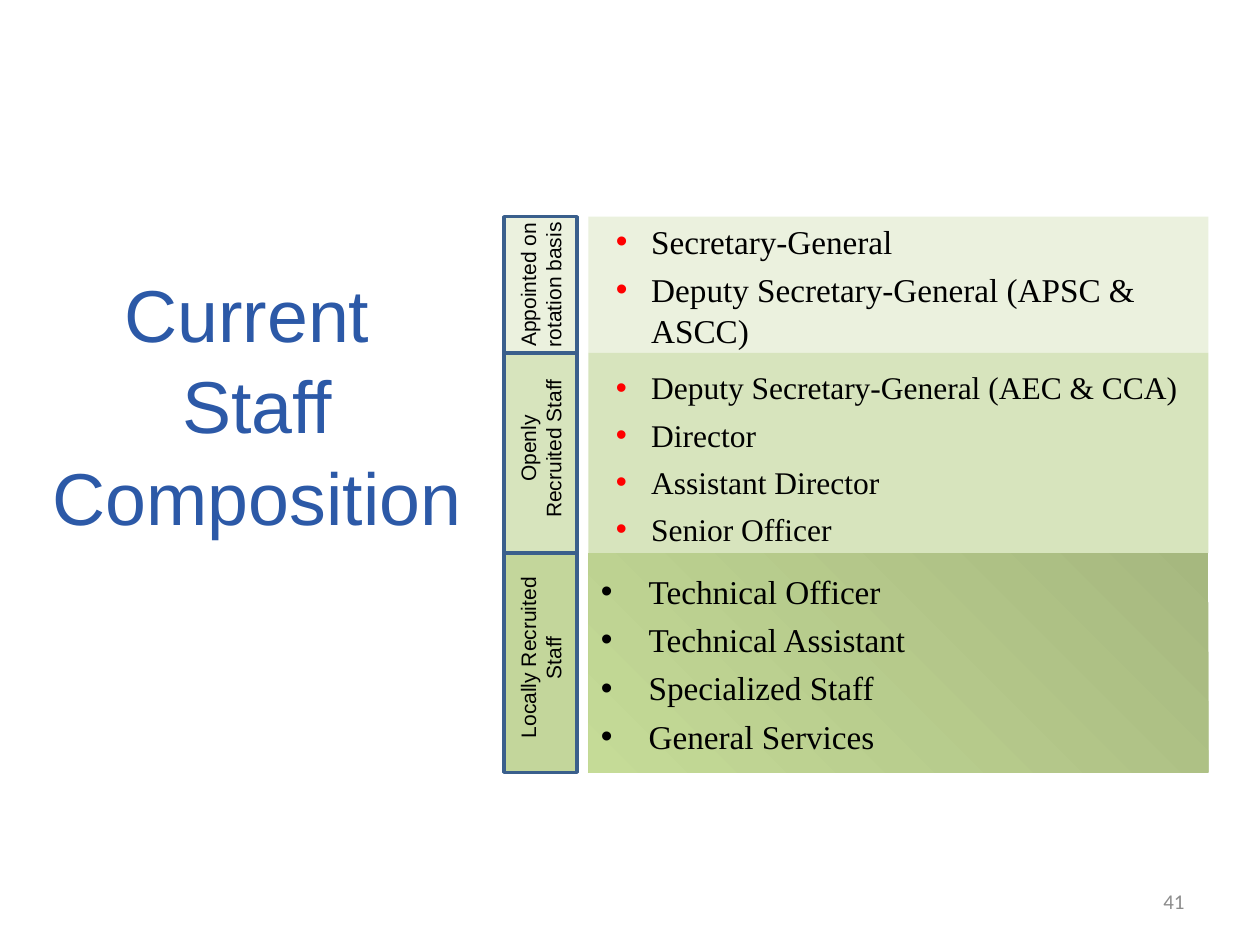
from lxml import etree
from pptx import Presentation
from pptx.dml.color import RGBColor
from pptx.enum.shapes import MSO_SHAPE as Preset
from pptx.enum.text import MSO_ANCHOR as Anchor, PP_ALIGN as Align
from pptx.oxml.ns import qn
from pptx.util import Inches, Pt

LABEL_LEFT, LABEL_WIDTH = 4, 0.58
LIST_LEFT, LIST_WIDTH = 4.67, 4.92
LABEL_HEIGHT = 0.5

LABEL_FORMAT = {"name": "Arial", "size": Pt(12)}
TITLE_FORMAT = {"name": "Arial", "size": Pt(42)}
NUMBER_FORMAT = {"name": "Calibri", "size": Pt(12)}

WIDE_LIST = {"margin": 0.4, "hanging": 0.28, "bullet": "FF0000", "size": 19,
             "spacing": 1.04, "before": 3.8, "anchor": Anchor.MIDDLE}
OPEN_LIST = WIDE_LIST | {"size": 18, "spacing": 1.25, "before": 0,
                         "anchor": Anchor.TOP}
LOCAL_LIST = WIDE_LIST | {"margin": 0.38, "hanging": 0.38, "bullet": "000000"}

GROUPS = [
    {"label": "Appointed on rotation basis", "label_length": 1.25,
     "label_middle": 2.26, "top": 1.72, "height": 1.08,
     "fill": "EBF1DE", "gradient": None, "style": WIDE_LIST,
     "posts": ["Secretary-General", "Deputy Secretary-General (APSC & ASCC)"]},
    {"label": "Openly Recruited Staff", "label_length": 1.48,
     "label_middle": 3.56, "top": 2.8, "height": 1.59,
     "fill": "D7E4BD", "gradient": None, "style": OPEN_LIST,
     "posts": ["Deputy Secretary-General (AEC & CCA)", "Director",
               "Assistant Director", "Senior Officer"]},
    {"label": "Locally Recruited Staff", "label_length": 1.5,
     "label_middle": 5.22, "top": 4.39, "height": 1.74,
     "fill": "C3D69B", "gradient": ("A6B87F", "C5DB97"), "style": LOCAL_LIST,
     "posts": ["Technical Officer", "Technical Assistant",
               "Specialized Staff", "General Services"]},
]


def color(value):
    return RGBColor.from_string(value)


def format_span(span, values, ink="000000"):
    for name, value in values.items():
        setattr(span.font, name, value)
    span.font.color.rgb = color(ink)


def add_rectangle(page, box, fill):
    shape = page.shapes.add_shape(Preset.RECTANGLE, *map(Inches, box))
    shape.shadow.inherit = False
    shape.fill.solid()
    shape.fill.fore_color.rgb = color(fill)
    shape.line.fill.background()
    return shape


def add_text(page, box, text, values, ink="000000", align=Align.CENTER,
             anchor=Anchor.TOP, spacing=1.0):
    """Add a one-paragraph text box; a vertical tab breaks the line."""
    shape = page.shapes.add_textbox(*map(Inches, box))
    frame = shape.text_frame
    frame.word_wrap = True
    frame.vertical_anchor = anchor
    para = frame.paragraphs[0]
    para.text = text
    para.alignment = align
    para.line_spacing = spacing
    for span in para.runs:
        format_span(span, values, ink)
    return shape


def add_bullet(para, style):
    properties = para._p.get_or_add_pPr()
    properties.set("marL", str(Inches(style["margin"])))
    properties.set("indent", str(-Inches(style["hanging"])))
    bullet_color = etree.SubElement(properties, qn("a:buClr"))
    etree.SubElement(bullet_color, qn("a:srgbClr"), val=style["bullet"])
    etree.SubElement(properties, qn("a:buFont"), typeface="Arial")
    etree.SubElement(properties, qn("a:buChar"), char="•")


def add_label(page, box, group):
    shape = add_rectangle(page, box, group["fill"])
    shape.line.color.rgb = color("3A5F8C")
    shape.line.width = Pt(2)
    left, _, width, _ = box
    length = group["label_length"]
    text_box = (left + width / 2 - length / 2,
                group["label_middle"] - LABEL_HEIGHT / 2, length, LABEL_HEIGHT)
    add_text(page, text_box, group["label"], LABEL_FORMAT).rotation = 270


def add_posts(page, box, group):
    shape = add_rectangle(page, box, group["fill"])
    if group["gradient"]:
        shape.fill.gradient()
        shape.fill.gradient_angle = 225
        for stop, value in zip(shape.fill.gradient_stops, group["gradient"]):
            stop.color.rgb = color(value)
    style = group["style"]
    frame = shape.text_frame
    frame.word_wrap = True
    frame.vertical_anchor = style["anchor"]
    for index, post in enumerate(group["posts"]):
        para = frame.add_paragraph() if index else frame.paragraphs[0]
        add_bullet(para, style)
        para.alignment = Align.LEFT
        para.line_spacing = style["spacing"]
        para.space_before = Pt(style["before"] if index else 0)
        span = para.add_run()
        span.text = post
        format_span(span, {"name": "Times New Roman", "size": Pt(style["size"])})


def add_group(page, group):
    top, height = group["top"], group["height"]
    add_label(page, (LABEL_LEFT, top, LABEL_WIDTH, height), group)
    add_posts(page, (LIST_LEFT, top, LIST_WIDTH, height), group)


def main():
    deck = Presentation()
    deck.slide_width, deck.slide_height = Inches(10), Inches(7.5)
    page = deck.slides.add_slide(deck.slide_layouts[6])
    add_text(page, (0.25, 1.64, 3.58, 3.11), "Current \vStaff Composition",
             TITLE_FORMAT, "2C59A7", anchor=Anchor.MIDDLE, spacing=1.04)
    for group in GROUPS:
        add_group(page, group)
    add_text(page, (7.17, 6.95, 2.33, 0.4), "41", NUMBER_FORMAT, "8C8C8C",
             align=Align.RIGHT, anchor=Anchor.MIDDLE)
    deck.save("out.pptx")


if __name__ == "__main__":
    main()
